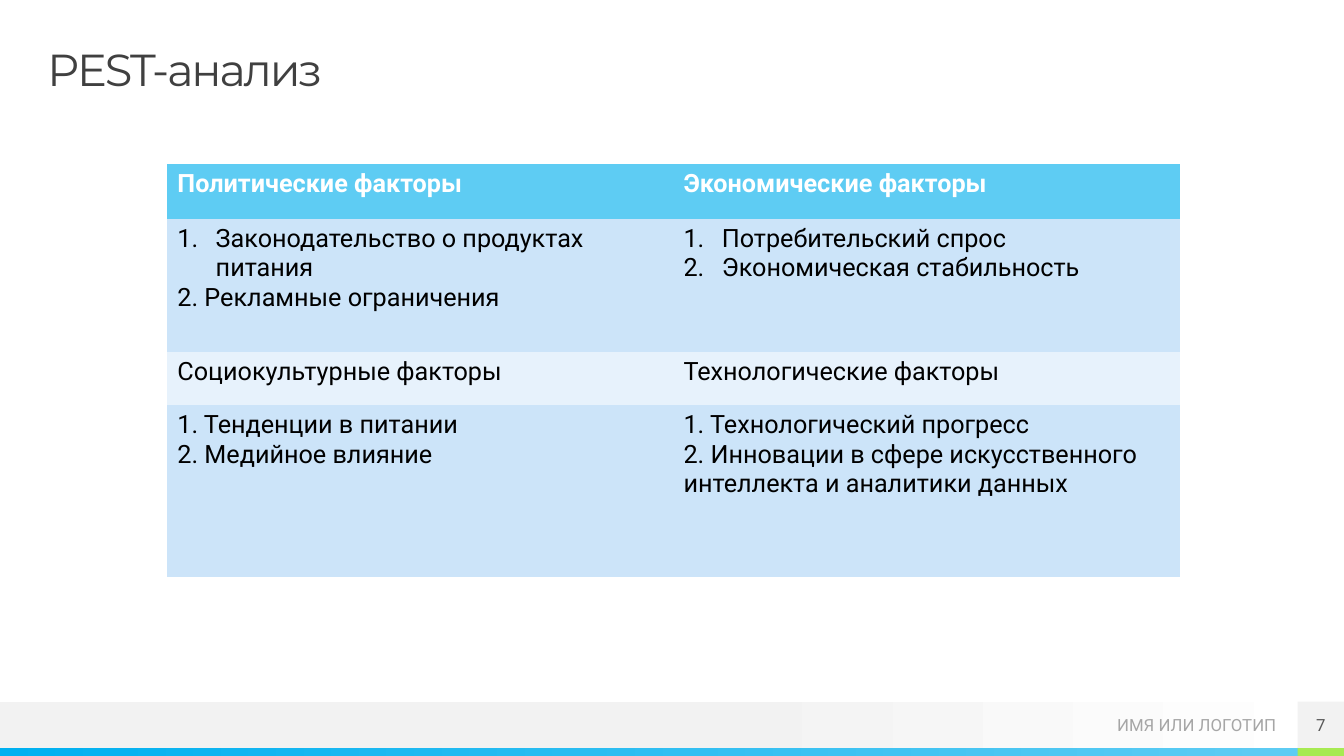
from dataclasses import dataclass

from lxml import etree
from pptx import Presentation
from pptx.dml.color import RGBColor
from pptx.enum.shapes import MSO_SHAPE
from pptx.enum.text import MSO_ANCHOR, MSO_AUTO_SIZE, PP_ALIGN
from pptx.oxml.ns import qn
from pptx.util import Inches, Pt

RECTANGLE = MSO_SHAPE.RECTANGLE
TOP, MIDDLE = MSO_ANCHOR.TOP, MSO_ANCHOR.MIDDLE
LEFT, CENTER, RIGHT = PP_ALIGN.LEFT, PP_ALIGN.CENTER, PP_ALIGN.RIGHT
NO_AUTOFIT = MSO_AUTO_SIZE.NONE
TITLE_ONLY = 5
PLAIN_TABLE = "{2D5ABB26-0587-4C30-8999-92F81FD0307C}"


@dataclass(frozen=True)
class Theme:
    heading_font: str = "Montserrat"
    body_font: str = "Roboto"
    title_size: int = 32
    table_size: int = 18
    footer_size: int = 12
    white: str = "FFFFFF"
    black: str = "000000"
    title: str = "404040"
    number: str = "595959"
    logo: str = "A6A6A6"
    footer: str = "F2F2F2"
    blue: str = "00B0F0"
    sky: str = "5ECCF3"
    green: str = "A7EA52"
    band: str = "CCE4F9"
    light_band: str = "E7F2FC"


def rgb(color):
    return RGBColor.from_string(color)


def write(paragraph, text, *, font, size, color, bold=False, align=LEFT,
          line_spacing=None, tracking=None, numbered=False):
    paragraph.text = text
    paragraph.alignment = align
    if line_spacing:
        paragraph.line_spacing = line_spacing
    for run in paragraph.runs:
        run.font.name = font
        run.font.size = Pt(size)
        run.font.bold = bold
        run.font.color.rgb = rgb(color)
        if tracking:
            run.font._element.set("spc", str(round(tracking * 100)))
    if numbered:
        properties = paragraph._p.get_or_add_pPr()
        hanging = Inches(0.38)
        properties.set("marL", str(hanging))
        properties.set("indent", str(-hanging))
        etree.SubElement(properties, qn("a:buAutoNum"), type="arabicPeriod")


class SlideBuilder:
    def __init__(self, slide, theme):
        self.slide = slide
        self.theme = theme

    def frame(self, shape, anchor):
        frame = shape.text_frame
        frame.margin_left = frame.margin_right = 0
        frame.margin_top = frame.margin_bottom = 0
        frame.word_wrap = True
        frame.auto_size = NO_AUTOFIT
        frame.vertical_anchor = anchor
        return frame.paragraphs[0]

    def title(self, text, left, top, width, height):
        heading = self.slide.shapes.title
        heading.left, heading.top = Inches(left), Inches(top)
        heading.width, heading.height = Inches(width), Inches(height)
        write(self.frame(heading, TOP), text, font=self.theme.heading_font,
              size=self.theme.title_size, color=self.theme.title,
              line_spacing=0.9, tracking=-1.5)

    def bar(self, left, top, width, height, *stops):
        bar = self.slide.shapes.add_shape(
            RECTANGLE, Inches(left), Inches(top), Inches(width), Inches(height))
        bar.shadow.inherit = False
        bar.line.fill.background()
        if len(stops) == 1:
            bar.fill.solid()
            bar.fill.fore_color.rgb = rgb(stops[0][1])
        else:
            bar.fill.gradient()
            bar.fill.gradient_angle = 0
            for stop, (position, color) in zip(bar.fill.gradient_stops, stops):
                stop.position = position
                stop.color.rgb = rgb(color)
        return bar

    def footer_text(self, shape, text, color, align):
        write(self.frame(shape, MIDDLE), text, font=self.theme.body_font,
              size=self.theme.footer_size, color=color, align=align)

    def label(self, text, left, top, width, height, color, align):
        box = self.slide.shapes.add_textbox(
            Inches(left), Inches(top), Inches(width), Inches(height))
        self.footer_text(box, text, color, align)

    def table(self, rows, left, top, column_width, row_heights, fills):
        columns = len(rows[0])
        table = self.slide.shapes.add_table(
            len(rows), columns, Inches(left), Inches(top),
            Inches(column_width * columns), Inches(sum(row_heights))).table
        table._tbl.tblPr.find(qn("a:tableStyleId")).text = PLAIN_TABLE
        for column in table.columns:
            column.width = Inches(column_width)
        for index, (factors, height, fill) in enumerate(zip(rows, row_heights, fills)):
            table.rows[index].height = Inches(height)
            header = index == 0
            for cell, paragraphs in zip(table.rows[index].cells, factors):
                cell.fill.solid()
                cell.fill.fore_color.rgb = rgb(fill)
                for position, (text, numbered) in enumerate(paragraphs):
                    frame = cell.text_frame
                    paragraph = frame.add_paragraph() if position else frame.paragraphs[0]
                    write(paragraph, text, font=self.theme.body_font,
                          size=self.theme.table_size, bold=header, numbered=numbered,
                          color=self.theme.white if header else self.theme.black)


def plain(text):
    return [(text, False)]


PEST_FACTORS = [
    [plain("Политические факторы"), plain("Экономические факторы")],
    [
        [("Законодательство о продуктах питания", True),
         ("2. Рекламные ограничения", False)],
        [("Потребительский спрос", True), ("Экономическая стабильность", True)],
    ],
    [plain("Социокультурные факторы"), plain("Технологические факторы")],
    [
        plain("1. Тенденции в питании\n2. Медийное влияние"),
        plain("1. Технологический прогресс\n"
              "2. Инновации в сфере искусственного интеллекта и аналитики данных"),
    ],
]


def main():
    theme = Theme()
    presentation = Presentation()
    presentation.slide_width = Inches(13.33)
    presentation.slide_height = Inches(7.5)
    slide = presentation.slides.add_slide(presentation.slide_layouts[TITLE_ONLY])
    builder = SlideBuilder(slide, theme)

    builder.bar(0, 6.96, 13.33, 0.46, (0.53, theme.footer), (1, theme.white))
    builder.bar(0, 7.42, 12.87, 0.08, (0, theme.blue), (1, theme.sky))
    builder.bar(12.87, 7.42, 0.46, 0.08, (0, theme.green))
    builder.label("ИМЯ ИЛИ ЛОГОТИП", 10.42, 6.96, 2.24, 0.47, theme.logo, RIGHT)
    builder.title("PEST-анализ", 0.47, 0.47, 12.4, 0.47)
    page = builder.bar(12.87, 6.96, 0.46, 0.46, (0, theme.footer))
    builder.footer_text(page, "7", theme.number, CENTER)
    builder.table(PEST_FACTORS, 1.66, 1.63, 5.02, [0.54, 1.32, 0.53, 1.71],
                  [theme.sky, theme.band, theme.light_band, theme.band])

    presentation.save("out.pptx")


if __name__ == "__main__":
    main()
